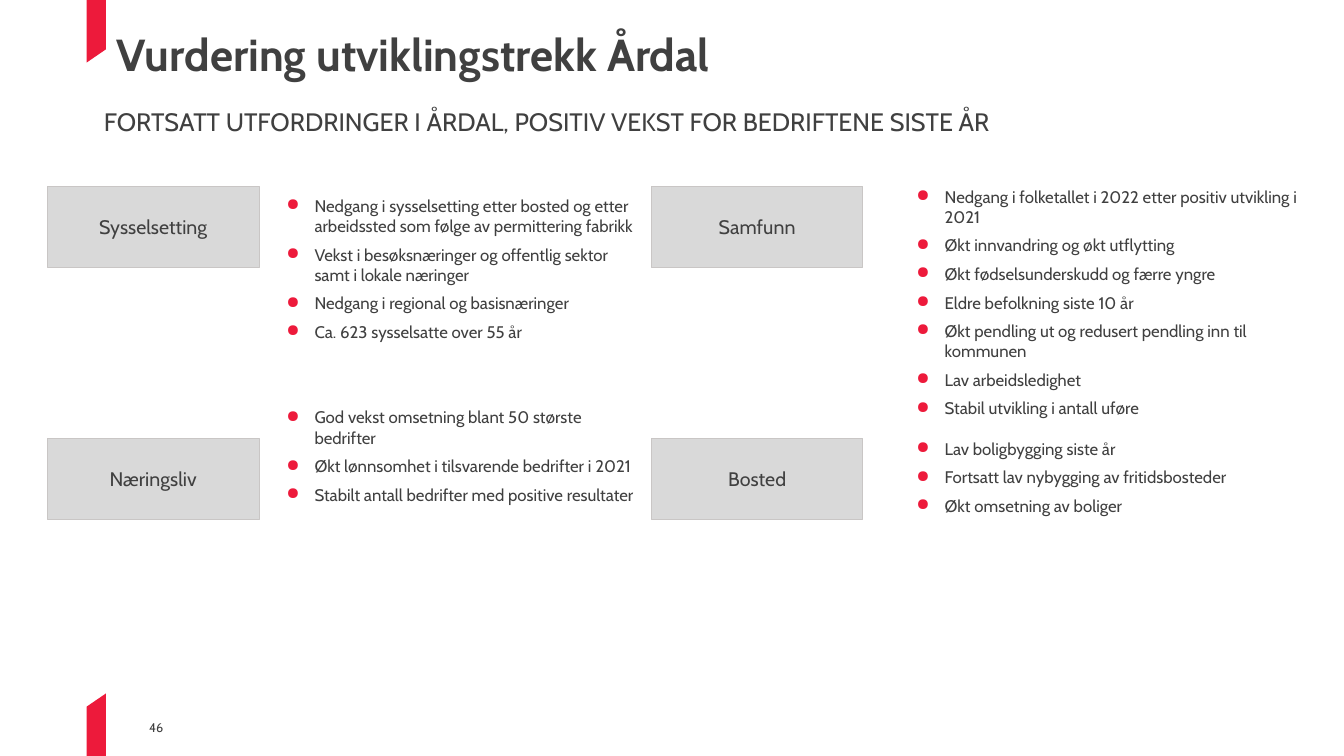
from dataclasses import dataclass

from lxml import etree
from pptx import Presentation
from pptx.dml.color import RGBColor
from pptx.enum.shapes import MSO_SHAPE
from pptx.enum.text import MSO_ANCHOR, PP_ALIGN
from pptx.oxml.ns import qn
from pptx.util import Inches, Pt

RECTANGLE = MSO_SHAPE.RECTANGLE
TOP, MIDDLE = MSO_ANCHOR.TOP, MSO_ANCHOR.MIDDLE
LEFT, CENTER = PP_ALIGN.LEFT, PP_ALIGN.CENTER


@dataclass(frozen=True)
class Theme:
    font: str = "Cabin"
    text: str = "404040"
    accent: str = "ED1A3B"
    box_fill: str = "D9D9D9"
    box_line: str = "C9C6C5"
    title: int = 32
    subtitle: int = 18
    label: int = 14
    body: int = 12
    number: int = 9


THEME = Theme()
SLIDE_WIDTH, SLIDE_HEIGHT = 13.33, 7.5
LABEL_WIDTH, LABEL_HEIGHT = 2.1, 0.8
ROW_TOPS = (1.85, 4.35)

# Each column: label left, list left, list width, and (label, list offset, points) per row
COLUMNS = (
    (0.47, 2.84, 3.5, (
        ("Sysselsetting", 0.09, (
            "Nedgang i sysselsetting etter bosted og etter arbeidssted som følge av permittering fabrikk",
            "Vekst i besøksnæringer og offentlig sektor samt i lokale næringer",
            "Nedgang i regional og basisnæringer",
            "Ca. 623 sysselsatte over 55 år",
        )),
        ("Næringsliv", -0.31, (
            "God vekst omsetning blant 50 største bedrifter",
            "Økt lønnsomhet i tilsvarende bedrifter i 2021",
            "Stabilt antall bedrifter med positive resultater",
        )),
    )),
    (6.46, 9.09, 4.13, (
        ("Samfunn", 0, (
            "Nedgang i folketallet i 2022 etter positiv utvikling i 2021",
            "Økt innvandring og økt utflytting",
            "Økt fødselsunderskudd og færre yngre",
            "Eldre befolkning siste 10 år",
            "Økt pendling ut og redusert pendling inn til kommunen",
            "Lav arbeidsledighet",
            "Stabil utvikling i antall uføre",
        )),
        ("Bosted", 0, (
            "Lav boligbygging siste år",
            "Fortsatt lav nybygging av fritidsbosteder",
            "Økt omsetning av boliger",
        )),
    )),
)


def set_attributes(target, values):
    for name, value in values.items():
        setattr(target, name, value)


def add_bullet(paragraph):
    properties = paragraph._p.get_or_add_pPr()
    properties.set("marL", str(Inches(0.28)))
    properties.set("indent", str(-Inches(0.28)))
    color = etree.SubElement(properties, qn("a:buClr"))
    etree.SubElement(color, qn("a:srgbClr"), val=THEME.accent)
    etree.SubElement(properties, qn("a:buChar"), char="●")


def write_text(shape, lines, size, bold=False, anchor=TOP, align=LEFT,
               line_spacing=None, bulleted=False):
    frame = shape.text_frame
    set_attributes(frame, {
        "word_wrap": True, "vertical_anchor": anchor,
        "margin_left": 0, "margin_right": 0, "margin_top": 0, "margin_bottom": 0,
    })
    for index, line in enumerate(lines):
        paragraph = frame.add_paragraph() if index else frame.paragraphs[0]
        paragraph.text = line
        if bulleted:
            add_bullet(paragraph)
        set_attributes(paragraph, {"alignment": align, "line_spacing": line_spacing})
        if index:
            paragraph.space_before = Pt(6)
        font = paragraph.runs[0].font
        set_attributes(font, {"name": THEME.font, "size": Pt(size), "bold": bold})
        font.color.rgb = RGBColor.from_string(THEME.text)


def add_text(slide, box, lines, size, **formats):
    shape = slide.shapes.add_textbox(*map(Inches, box))
    write_text(shape, lines, size, **formats)


def add_edge_mark(slide, left, edge, direction):
    """Draw a slanted ribbon that grows from a slide edge; direction is 1 down, -1 up."""
    right = left + 0.19
    short, long = edge + direction * 0.49, edge + direction * 0.62
    builder = slide.shapes.build_freeform(Inches(left), Inches(edge))
    corners = ((right, edge), (right, short), (left, long))
    if direction < 0:
        corners = ((right, edge), (right, long), (left, short))
    builder.add_line_segments([(Inches(x), Inches(y)) for x, y in corners])
    mark = builder.convert_to_shape()
    mark.shadow.inherit = False
    mark.fill.solid()
    mark.fill.fore_color.rgb = RGBColor.from_string(THEME.accent)
    mark.line.fill.background()


def add_label(slide, left, top, label):
    shape = slide.shapes.add_shape(
        RECTANGLE, *map(Inches, (left, top, LABEL_WIDTH, LABEL_HEIGHT)))
    shape.shadow.inherit = False
    shape.fill.solid()
    shape.fill.fore_color.rgb = RGBColor.from_string(THEME.box_fill)
    shape.line.color.rgb = RGBColor.from_string(THEME.box_line)
    shape.line.width = Pt(0.75)
    write_text(shape, [label], THEME.label, anchor=MIDDLE, align=CENTER)


def add_column(slide, label_left, list_left, list_width, topics):
    for top, (label, offset, points) in zip(ROW_TOPS, topics):
        add_label(slide, label_left, top, label)
        add_text(slide, (list_left, top + offset, list_width, 1.9), points,
                 THEME.body, bulleted=True)


def add_header(slide):
    add_text(slide, (1.16, 0.33, 11.7, 0.69), ["Vurdering utviklingstrekk Årdal"],
             THEME.title, bold=True, line_spacing=0.88)
    add_text(slide, (1.03, 1.11, 11.83, 0.24),
             ["FORTSATT UTFORDRINGER I ÅRDAL, POSITIV VEKST FOR BEDRIFTENE SISTE ÅR"],
             THEME.subtitle, line_spacing=0.8)


def main():
    presentation = Presentation()
    presentation.slide_width = Inches(SLIDE_WIDTH)
    presentation.slide_height = Inches(SLIDE_HEIGHT)
    slide = presentation.slides.add_slide(presentation.slide_layouts[6])
    add_edge_mark(slide, 0.86, 0, 1)
    add_edge_mark(slide, 0.86, SLIDE_HEIGHT, -1)
    add_header(slide)
    for column in COLUMNS:
        add_column(slide, *column)
    add_text(slide, (1.48, 7.1, 0.79, 0.24), ["46"], THEME.number, anchor=MIDDLE)
    presentation.save("out.pptx")


if __name__ == "__main__":
    main()
